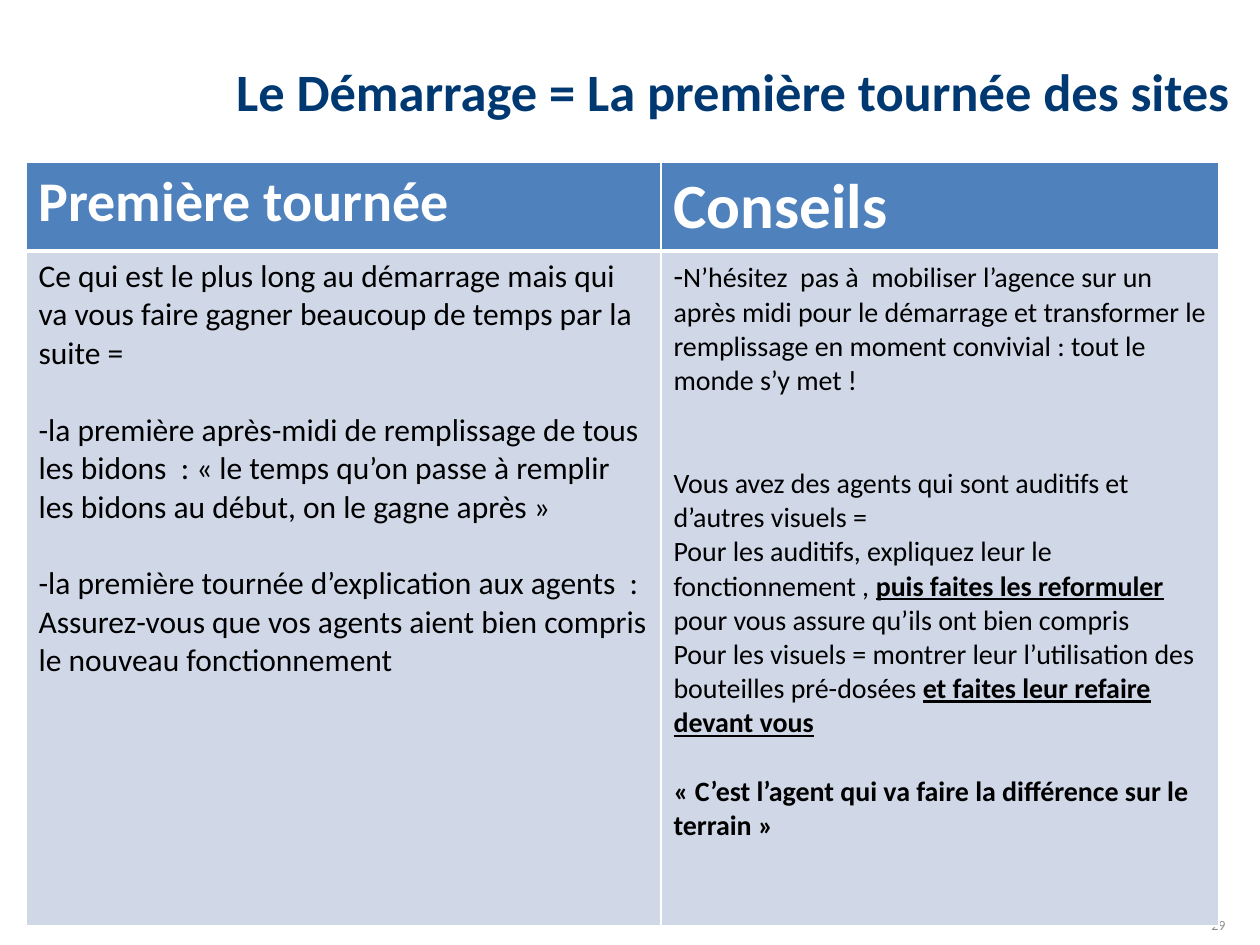
from lxml import etree
from pptx import Presentation
from pptx import util as u
from pptx.dml.color import RGBColor
from pptx.enum import text
from pptx.oxml.ns import qn

EMU_PER_PX = 914400 / 126
FONT = "Calibri"
COLORS = {
    "title": "003871",
    "number": "8C8C8C",
    "header": "4F81BD",
    "body": "D0D8E8",
    "white": "FFFFFF",
    "black": "000000",
}
EMPHASIS = {"bold": True, "underline": True}


def px(length):
    return u.Emu(round(length * EMU_PER_PX))


class SlideBuilder:
    def __init__(self, presentation):
        self.slide = presentation.slides.add_slide(presentation.slide_layouts[5])

    def add_run(self, paragraph, words, size, color, bold=False, underline=False):
        run = paragraph.add_run()
        run.text = words
        font = run.font
        font.name, font.size = FONT, u.Pt(size)
        font.bold, font.underline = bold, underline
        font.color.rgb = RGBColor.from_string(COLORS[color])

    def title(self, words, left, top, width, height):
        shape = self.slide.shapes.title
        shape.left, shape.top, shape.width, shape.height = map(px, (left, top, width, height))
        frame = shape.text_frame
        frame.word_wrap = True
        frame.auto_size = text.MSO_AUTO_SIZE.NONE
        frame.vertical_anchor = text.MSO_ANCHOR.BOTTOM
        paragraph = frame.paragraphs[0]
        paragraph.alignment = text.PP_ALIGN.RIGHT
        self.add_run(paragraph, words, 30, "title", bold=True)

    def page_number(self, words, left, top, width, height):
        shape = self.slide.shapes.add_textbox(*map(px, (left, top, width, height)))
        shape.text_frame.word_wrap = True
        paragraph = shape.text_frame.paragraphs[0]
        paragraph.alignment = text.PP_ALIGN.RIGHT
        self.add_run(paragraph, words, 8, "number")

    def table(self, left, top, column_widths, row_heights):
        frame = self.slide.shapes.add_table(
            len(row_heights), len(column_widths), px(left), px(top),
            px(sum(column_widths)), px(sum(row_heights)))
        table = frame.table
        for column, width in zip(table.columns, column_widths):
            column.width = px(width)
        for row, height in zip(table.rows, row_heights):
            row.height = px(height)
        return table

    def cell(self, cell, fill, color, paragraphs, border_widths):
        """Each paragraph is (space before, [(words, size, options)])."""
        cell.fill.solid()
        cell.fill.fore_color.rgb = RGBColor.from_string(COLORS[fill])
        self.borders(cell, border_widths)
        frame = cell.text_frame
        for index, (space, runs) in enumerate(paragraphs):
            paragraph = frame.add_paragraph() if index else frame.paragraphs[0]
            if space:
                paragraph.space_before = u.Pt(space)
            for words, size, options in runs:
                self.add_run(paragraph, words, size, color, **options)

    def borders(self, cell, widths):
        """Draw white borders, widths in points: left, right, top, bottom."""
        properties = cell._tc.get_or_add_tcPr()
        for index, (side, width) in enumerate(zip("LRTB", widths)):
            line = etree.Element(qn(f"a:ln{side}"), w=str(u.Pt(width)))
            fill = etree.SubElement(line, qn("a:solidFill"))
            etree.SubElement(fill, qn("a:srgbClr"), val=COLORS["white"])
            properties.insert(index, line)


def main():
    presentation = Presentation()
    presentation.slide_width, presentation.slide_height = px(1260), px(945)
    builder = SlideBuilder(presentation)
    builder.title("Le Démarrage = La première tournée des sites", 139, 0, 1104, 128)
    builder.page_number("29", 1144, 910, 94, 25)
    table = builder.table(26, 162, [635, 558], [89, 675])

    headers = [("Première tournée", 32), ("Conseils", 36)]
    first_round = [
        (0, [("Ce qui est le plus long au démarrage mais qui va vous faire gagner "
              "beaucoup de temps par la suite =", 18, {})]),
        (22, [("-la première après-midi de remplissage de tous les bidons  : "
               "« le temps qu’on passe à remplir les bidons au début, "
               "on le gagne après »", 18, {})]),
        (22, [("-la première tournée d’explication aux agents  : Assurez-vous que "
               "vos agents aient bien compris le nouveau fonctionnement", 18, {})]),
    ]
    advice = [
        (0, [("-", 18, {}),
             ("N’hésitez  pas à  mobiliser l’agence sur un après midi pour le "
              "démarrage et transformer le remplissage en moment convivial : "
              "tout le monde s’y met !", 16, {})]),
        (39, [("Vous avez des agents qui sont auditifs et d’autres visuels =", 16, {})]),
        (0, [("Pour les auditifs, expliquez leur le fonctionnement , ", 16, {}),
             ("puis faites les reformuler ", 16, EMPHASIS),
             ("pour vous assure qu’ils ont bien compris", 16, {})]),
        (0, [("Pour les visuels = montrer leur l’utilisation des bouteilles "
              "pré-dosées ", 16, {}),
             ("et faites leur refaire devant vous", 16, EMPHASIS)]),
        (19.5, [("« C’est l’agent qui va faire la différence sur le terrain »",
                 16, {"bold": True})]),
    ]
    for column, (words, size) in enumerate(headers):
        builder.cell(table.cell(0, column), "header", "white",
                     [(0, [(words, size, {"bold": True})])], (1, 1, 1, 3))
    for column, paragraphs in enumerate([first_round, advice]):
        builder.cell(table.cell(1, column), "body", "black", paragraphs, (1, 1, 3, 1))
    presentation.save("out.pptx")


if __name__ == "__main__":
    main()
